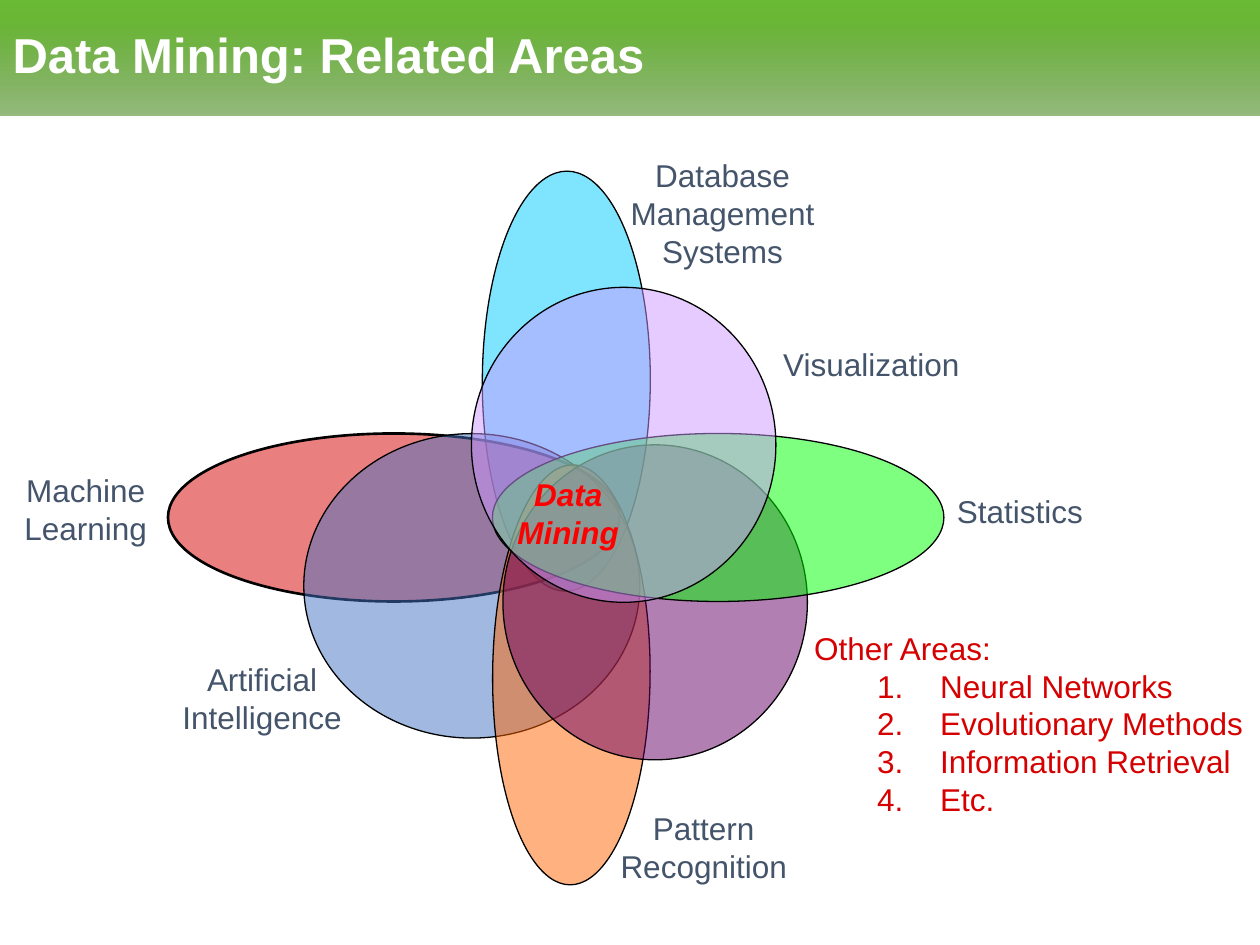
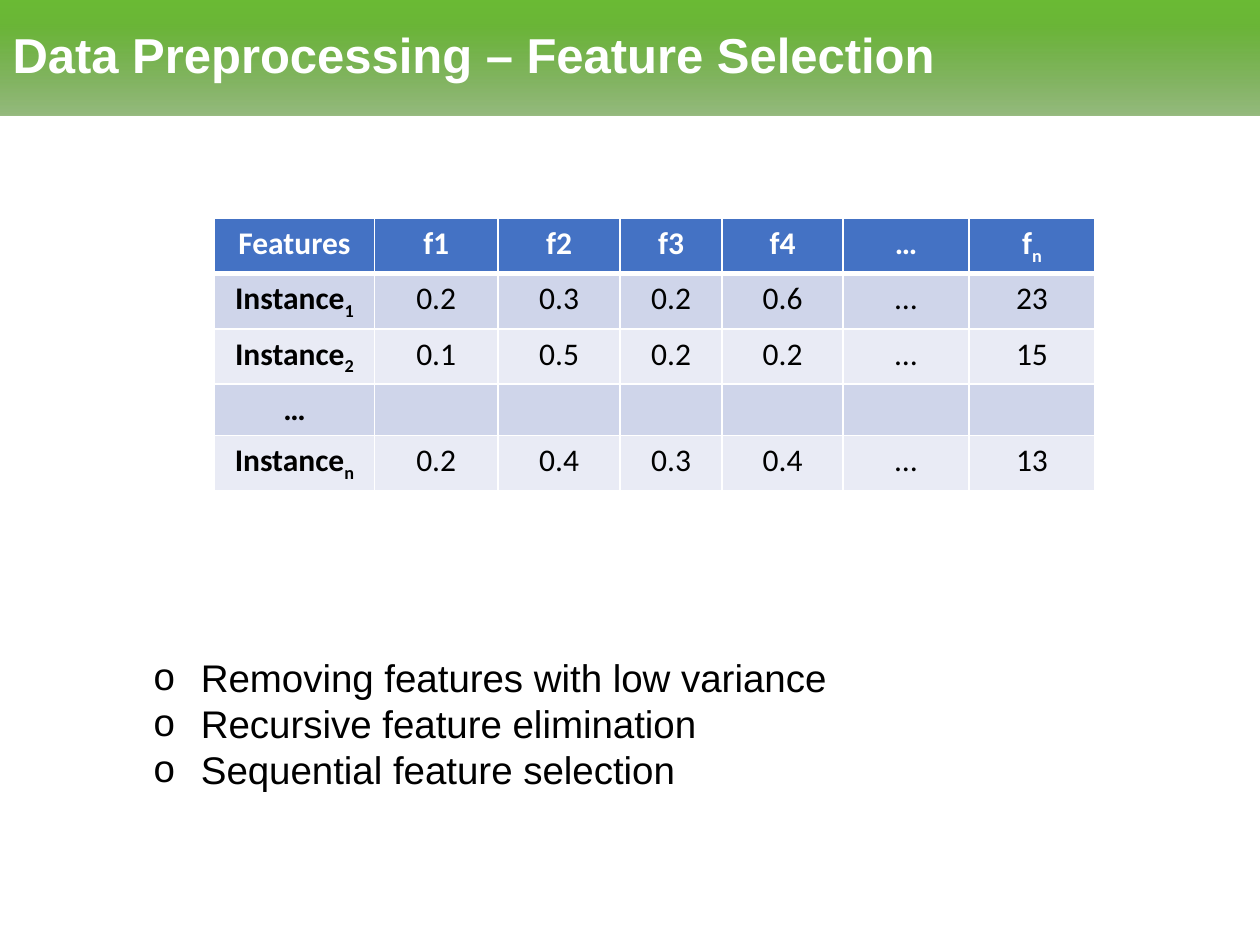
from lxml.etree import SubElement
from pptx import Presentation
from pptx.dml.color import RGBColor
from pptx.enum.shapes import MSO_SHAPE
from pptx.enum.text import MSO_ANCHOR, MSO_AUTO_SIZE, PP_ALIGN
from pptx.oxml.ns import qn
from pptx.util import Pt

COLORS = {
    "white": "FFFFFF", "black": "000000", "slate": "44546A",
    "red": "FF0000", "crimson": "D60000", "blue": "4472C4",
    "cyan": "00CCFF", "orange": "FF6600", "plum": "660066",
    "green": "00FF00", "lilac": "CC99FF",
    "band_bottom": "518D2A", "band_middle": "6AB636", "band_top": "6ABA34",
    "row_dark": "CFD5EA", "row_light": "E9EBF5",
}
TITLE_BOX = (0, 0, 720, 66)
VENN_BOX = (0, 84, 648, 420)
OTHER_AREAS_BOX = (458, 355.7, 262, 117)
FEATURES_BOX = (122.6, 124.6, 503, 146)
METHODS_BOX = (80.6, 370, 404, 140)

BAND_STOPS = [("0", "band_bottom", "60000"), ("80000", "band_middle", "100000"),
              ("100000", "band_top", "100000")]

AREAS = [
    ("cyan", -0.4, -76.2, 240, 96, 90.2, 0.75),
    ("crimson", -99, 1.7, 258, 96, 0, 1.5),
    ("blue", -54.4, 40.8, 192, 174, 0, 0.75),
    ("orange", 2.5, 91.6, 240, 90, 90.4, 0.75),
    ("plum", 50.4, 50.2, 174, 180, 0, 0.75),
    ("green", 86.4, 1.7, 258, 96, 0, 0.75),
    ("lilac", 32.4, -39.8, 174, 180, 0, 0.75),
]
AREA_NAMES = [
    ("Database\nManagement\nSystems", 88.9, -172, 120),
    ("Machine\nLearning", -275, -2.8, 85),
    ("Statistics", 258.8, -1.7, 87),
    ("Pattern\nRecognition", 78.1, 190.2, 110),
    ("Visualization", 173.9, -85.9, 116),
    ("Artificial\nIntelligence", -174.2, 105.2, 107),
]
OTHER_AREAS = ["Other Areas:", "Neural Networks", "Evolutionary Methods",
               "Information Retrieval", "Etc."]
FEATURE_WIDTHS = [91.4, 70.6, 69.8, 58.3, 69.1, 72, 72]
FEATURE_ROWS = [
    ["Features", "f1", "f2", "f3", "f4", "…", "f_n"],
    ["Instance_1", "0.2", "0.3", "0.2", "0.6", "…", "23"],
    ["Instance_2", "0.1", "0.5", "0.2", "0.2", "…", "15"],
    ["…", "", "", "", "", "", ""],
    ["Instance_n", "0.2", "0.4", "0.3", "0.4", "…", "13"],
]
METHODS = ["Removing features with low variance", "Recursive feature elimination",
           "Sequential feature selection"]


def rgb(name):
    """Return the named colour."""
    return RGBColor.from_string(COLORS[name])


def style_font(font, size, color, face="Arial", bold=False, italic=False):
    """Format one font."""
    font.name, font.size, font.bold, font.italic = face, Pt(size), bold, italic
    font.color.rgb = rgb(color)


def style_runs(paragraphs, *look, **emphasis):
    """Format every run of the paragraphs alike."""
    for paragraph in paragraphs:
        for run in paragraph.runs:
            style_font(run.font, *look, **emphasis)


def move(placeholder, box):
    """Put a placeholder into a box."""
    left, top, width, height = (Pt(length) for length in box)
    placeholder.left, placeholder.top = left, top
    placeholder.width, placeholder.height = width, height


def add_color(parent, color, alpha):
    """Add a colour with an opacity to an XML element."""
    tint = SubElement(parent, qn("a:srgbClr"), val=COLORS[color])
    SubElement(tint, qn("a:alpha"), val=alpha)


def title_band(slide, title_text, box):
    """Fill the title placeholder as a gradient band."""
    title = slide.shapes.title
    move(title, box)
    gradient = SubElement(title._element.spPr, qn("a:gradFill"), rotWithShape="1")
    stops = SubElement(gradient, qn("a:gsLst"))
    for position, color, alpha in BAND_STOPS:
        add_color(SubElement(stops, qn("a:gs"), pos=position), color, alpha)
    SubElement(gradient, qn("a:lin"), ang="16200000", scaled="0")
    frame = title.text_frame
    frame.text = title_text
    frame.auto_size = MSO_AUTO_SIZE.NONE
    frame.vertical_anchor = MSO_ANCHOR.MIDDLE
    frame.paragraphs[0].alignment = PP_ALIGN.LEFT
    frame.paragraphs[0].line_spacing = 0.9
    style_runs(frame.paragraphs, 28, "white", bold=True)


def set_marker(paragraph, indent, hanging, marker, **attributes):
    """Set the indents and the bullet of a paragraph."""
    properties = paragraph._p.get_or_add_pPr()
    properties.set("marL", str(Pt(indent)))
    properties.set("indent", str(-Pt(hanging)))
    SubElement(properties, qn("a:buFont"), typeface="Arial")
    SubElement(properties, qn(marker), **attributes)


def body_list(slide, items, box, size, color):
    """Fill the body placeholder and return its paragraphs."""
    body = slide.placeholders[1]
    move(body, box)
    frame = body.text_frame
    frame.text = "\n".join(items)
    frame.auto_size = MSO_AUTO_SIZE.NONE
    frame.word_wrap = True
    frame.margin_right = 0
    for paragraph in frame.paragraphs:
        paragraph.space_before = Pt(0)
    style_runs(frame.paragraphs, size, color)
    return frame.paragraphs


def area_label(slide, label_text, center_x, center_y, width, color, **emphasis):
    """Write a centred label around a point."""
    height = 7.2 + 21.8 * len(label_text.split("\n"))
    label = slide.shapes.add_textbox(Pt(center_x - width / 2), Pt(center_y - height / 2),
                                     Pt(width), Pt(height))
    frame = label.text_frame
    frame.text = label_text
    frame.word_wrap = False
    for paragraph in frame.paragraphs:
        paragraph.alignment = PP_ALIGN.CENTER
    style_runs(frame.paragraphs, 18, color, **emphasis)


def venn_diagram(slide, box):
    """Draw the overlapping areas around the centre of the box."""
    left, top, box_width, box_height = box
    middle_x, middle_y = left + box_width / 2, top + box_height / 2
    for color, dx, dy, width, height, angle, outline in AREAS:
        area = slide.shapes.add_shape(
            MSO_SHAPE.OVAL, Pt(middle_x + dx - width / 2), Pt(middle_y + dy - height / 2),
            Pt(width), Pt(height))
        area.rotation = angle
        area.shadow.inherit = False
        area.fill.solid()
        area.fill.fore_color.rgb = rgb(color)
        tint = area._element.spPr.find(qn("a:solidFill")).find(qn("a:srgbClr"))
        SubElement(tint, qn("a:alpha"), val="50000")
        area.line.color.rgb = rgb("black")
        area.line.width = Pt(outline)
    for name, dx, dy, width in AREA_NAMES:
        area_label(slide, name, middle_x + dx, middle_y + dy, width, "slate")
    area_label(slide, "Data\nMining", middle_x + 0.7, middle_y - 0.6, 73, "red",
               bold=True, italic=True)


def set_borders(cell, widths):
    """Draw white borders, given left, right, top and bottom widths."""
    properties = cell._tc.get_or_add_tcPr()
    for side, width in zip("LRTB", widths):
        border = SubElement(properties, qn(f"a:ln{side}"), w=str(Pt(width)))
        fill = SubElement(border, qn("a:solidFill"))
        SubElement(fill, qn("a:srgbClr"), val=COLORS["white"])


def write_cell(cell, value, color, bold):
    """Write a centred value, with a subscript after an underscore."""
    paragraph = cell.text_frame.paragraphs[0]
    paragraph.alignment = PP_ALIGN.CENTER
    for position, part in enumerate(value.split("_")):
        if part:
            run = paragraph.add_run()
            run.text = part
            style_font(run.font, 18, color, "Calibri", bold)
            if position:
                run._r.get_or_add_rPr().set("baseline", "-25000")


def feature_table(slide, box):
    """Build the table of instances and features."""
    left, top, width, height = box
    table = slide.shapes.add_table(len(FEATURE_ROWS), len(FEATURE_WIDTHS), Pt(left), Pt(top),
                                   Pt(width), Pt(height)).table
    for column, column_width in zip(table.columns, FEATURE_WIDTHS):
        column.width = Pt(column_width)
    for r, values in enumerate(FEATURE_ROWS):
        table.rows[r].height = Pt(height / len(FEATURE_ROWS))
        background = "blue" if r == 0 else "row_dark" if r % 2 else "row_light"
        for c, value in enumerate(values):
            cell = table.cell(r, c)
            set_borders(cell, (1, 1, 3 if r == 1 else 1, 3 if r == 0 else 1))
            cell.fill.solid()
            cell.fill.fore_color.rgb = rgb(background)
            write_cell(cell, value, "black" if r else "white", r == 0 or c == 0)


def related_areas_slide(slide):
    """Build the slide on areas related to data mining."""
    title_band(slide, "Data Mining: Related Areas", TITLE_BOX)
    venn_diagram(slide, VENN_BOX)
    heading, *areas = body_list(slide, OTHER_AREAS, OTHER_AREAS_BOX, 18, "crimson")
    set_marker(heading, 36, 36, "a:buNone")
    for area in areas:
        area.level = 1
        set_marker(area, 72, 36, "a:buAutoNum", type="arabicPeriod")


def feature_selection_slide(slide):
    """Build the slide on feature selection."""
    title_band(slide, "Data Preprocessing – Feature Selection", TITLE_BOX)
    feature_table(slide, FEATURES_BOX)
    for method in body_list(slide, METHODS, METHODS_BOX, 22, "black"):
        set_marker(method, 27, 27, "a:buChar", char="o")


def main():
    """Build and save the presentation."""
    deck = Presentation()
    deck.slide_width, deck.slide_height = Pt(720), Pt(540)
    for build in (related_areas_slide, feature_selection_slide):
        build(deck.slides.add_slide(deck.slide_layouts[1]))
    deck.save("out.pptx")


if __name__ == "__main__":
    main()
